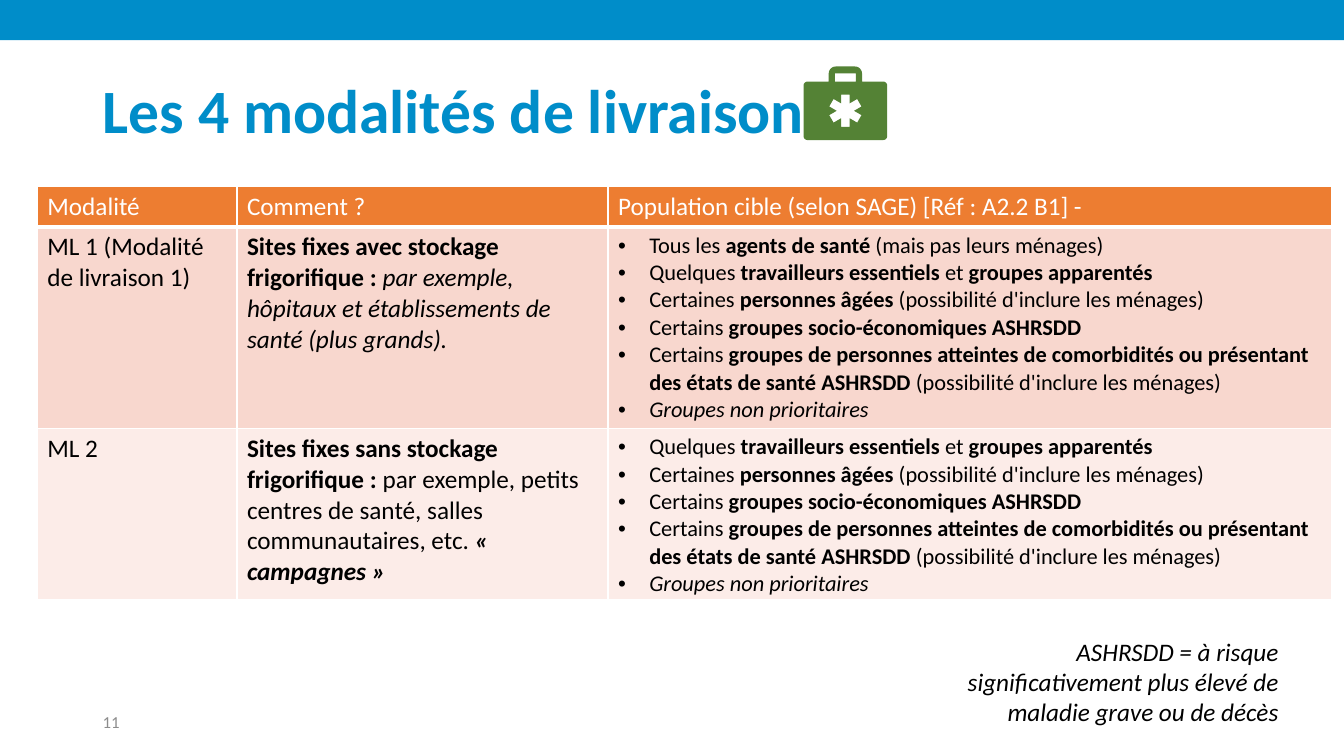
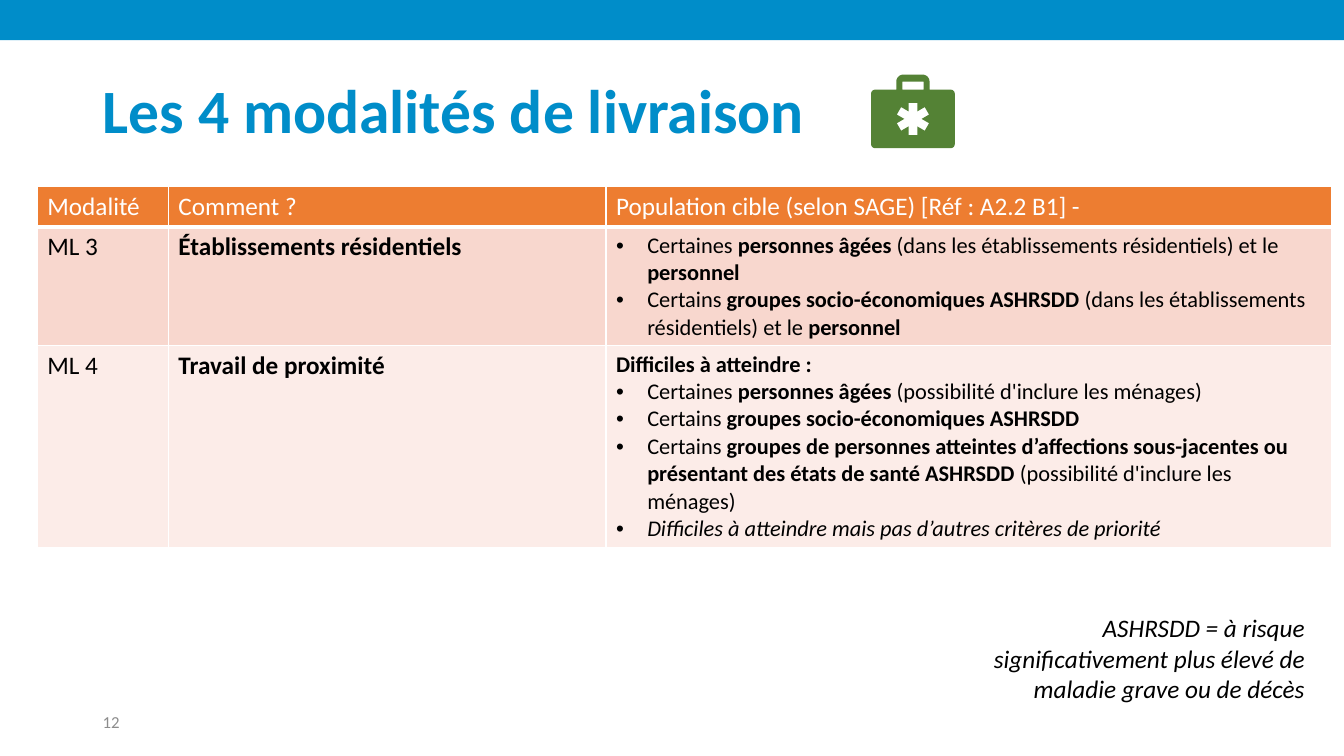
from dataclasses import dataclass
from math import cos, radians, sin

from lxml import etree
from pptx import Presentation
from pptx.dml.color import RGBColor
from pptx.enum.shapes import MSO_SHAPE
from pptx.enum.text import MSO_ANCHOR, PP_ALIGN
from pptx.oxml.ns import qn
from pptx.util import Inches, Pt

RECTANGLE = MSO_SHAPE.RECTANGLE
MIDDLE, TOP = MSO_ANCHOR.MIDDLE, MSO_ANCHOR.TOP
LEFT, RIGHT = PP_ALIGN.LEFT, PP_ALIGN.RIGHT

Point = tuple[float, float]


@dataclass(frozen=True)
class Theme:
    font: str = "Calibri"
    blue: str = "008DC9"
    orange: str = "ED7D31"
    row_fills: tuple[str, str] = ("F8D7CE", "FCECE8")
    green: str = "548235"
    grey: str = "8C8C8C"
    black: str = "000000"
    white: str = "FFFFFF"
    title_size: int = 44
    body_size: int = 18
    list_size: int = 16
    number_size: int = 12


@dataclass(frozen=True)
class Modality:
    name: str
    method: str
    targets: tuple[str, ...]
    height: float


@dataclass(frozen=True)
class ModalitySlide:
    number: int
    column_widths: tuple[float, float, float]
    modalities: tuple[Modality, ...]
    icon_at: Point
    note_at: Point


THEME = Theme()
TITLE = "Les 4 modalités de livraison"
NOTE = "_ASHRSDD = à risque significativement plus élevé de maladie grave ou de décès_"
HEADERS = ("Modalité", "Comment ?", "Population cible (selon SAGE) [Réf : A2.2 B1] -")
HEADER_HEIGHT = 0.39
BULLET = "• "
BULLET_INDENT = 0.31

# In the texts, * switches bold on and off, and _ switches italic.
WORKERS = "• Quelques *travailleurs essentiels* et *groupes apparentés*"
ELDERLY = "• Certaines *personnes âgées* (possibilité d'inclure les ménages)"
SOCIAL = "• Certains *groupes socio-économiques ASHRSDD*"
COMORBID = (
    "• Certains *groupes de personnes atteintes de comorbidités ou présentant "
    "des états de santé ASHRSDD* (possibilité d'inclure les ménages)"
)
COMMON_TARGETS = (WORKERS, ELDERLY, SOCIAL, COMORBID, "• _Groupes non prioritaires_")

SLIDES = (
    ModalitySlide(
        number=11,
        column_widths=(1.98, 3.68, 7.18),
        modalities=(
            Modality(
                "ML 1 (Modalité de livraison 1)",
                "*Sites fixes avec stockage frigorifique : *_par exemple, hôpitaux "
                "et établissements de santé (plus grands)._",
                ("• Tous les *agents de santé* (mais pas leurs ménages)", *COMMON_TARGETS),
                2.0,
            ),
            Modality(
                "ML 2",
                "*Sites fixes sans stockage frigorifique : *par exemple, petits centres "
                "de santé, salles communautaires, etc. *_« campagnes »_*",
                COMMON_TARGETS,
                1.7,
            ),
        ),
        icon_at=(7.97, 0.66),
        note_at=(8.8, 6.26),
    ),
    ModalitySlide(
        number=12,
        column_widths=(1.3, 4.34, 7.2),
        modalities=(
            Modality(
                "ML 3",
                "*Établissements résidentiels*",
                (
                    "• Certaines *personnes âgées* (dans les établissements résidentiels) "
                    "et le *personnel*",
                    f"{SOCIAL} (dans les établissements résidentiels) et le *personnel*",
                ),
                1.18,
            ),
            Modality(
                "ML 4",
                "*Travail de proximité*",
                (
                    "*Difficiles à atteindre :*",
                    ELDERLY,
                    SOCIAL,
                    COMORBID.replace("de comorbidités", "d’affections sous-jacentes"),
                    "• _Difficiles à atteindre mais pas d’autres critères de priorité_",
                ),
                2.0,
            ),
        ),
        icon_at=(8.64, 0.74),
        note_at=(9.06, 6.03),
    ),
)


def add_bullet(paragraph) -> None:
    properties = paragraph._p.get_or_add_pPr()
    properties.set("marL", str(Inches(BULLET_INDENT)))
    properties.set("indent", str(-Inches(BULLET_INDENT)))
    etree.SubElement(properties, qn("a:buFont"), typeface="Arial")
    etree.SubElement(properties, qn("a:buChar"), char=BULLET.strip())


def write_text(text_frame, *lines: str, size: int, color: str = THEME.black,
               align=LEFT, line_spacing: float = 1.0) -> None:
    """Write one paragraph per line, reading the bold, italic and bullet marks."""
    for index, line in enumerate(lines):
        paragraph = text_frame.add_paragraph() if index else text_frame.paragraphs[0]
        paragraph.alignment = align
        paragraph.line_spacing = line_spacing
        if line.startswith(BULLET):
            add_bullet(paragraph)
        for bold_index, bold_part in enumerate(line.removeprefix(BULLET).split("*")):
            for italic_index, text in enumerate(bold_part.split("_")):
                if not text:
                    continue
                run = paragraph.add_run()
                run.text = text
                run.font.name = THEME.font
                run.font.size = Pt(size)
                run.font.bold = bold_index % 2 == 1
                run.font.italic = italic_index % 2 == 1
                run.font.color.rgb = RGBColor.from_string(color)


def add_text_box(slide, left: float, top: float, width: float, height: float,
                 text: str, anchor=TOP, **text_format) -> None:
    box = slide.shapes.add_textbox(Inches(left), Inches(top), Inches(width), Inches(height))
    box.text_frame.word_wrap = True
    box.text_frame.vertical_anchor = anchor
    write_text(box.text_frame, text, **text_format)


def paint(shape, color: str) -> None:
    """Give a shape a flat fill without line or shadow."""
    shape.fill.solid()
    shape.fill.fore_color.rgb = RGBColor.from_string(color)
    shape.line.fill.background()
    shape.shadow.inherit = False


def fill_cell(cell, color: str, bottom_border: float = 1) -> None:
    """Fill a cell and draw its white borders."""
    cell.fill.solid()
    cell.fill.fore_color.rgb = RGBColor.from_string(color)
    properties = cell._tc.get_or_add_tcPr()
    widths = {"a:lnL": 1, "a:lnR": 1, "a:lnT": 1, "a:lnB": bottom_border}
    for index, (tag, width) in enumerate(widths.items()):
        border = etree.Element(qn(tag), w=str(Pt(width)))
        solid = etree.SubElement(border, qn("a:solidFill"))
        etree.SubElement(solid, qn("a:srgbClr"), val=THEME.white)
        properties.insert(index, border)


def add_modality_table(slide, content: ModalitySlide) -> None:
    heights = (HEADER_HEIGHT, *(modality.height for modality in content.modalities))
    table = slide.shapes.add_table(
        len(heights), len(HEADERS), Inches(0.37), Inches(1.85),
        Inches(sum(content.column_widths)), Inches(sum(heights)),
    ).table
    table.first_row = table.horz_banding = False
    for column, width in zip(table.columns, content.column_widths):
        column.width = Inches(width)
    for row, height in zip(table.rows, heights):
        row.height = Inches(height)

    for column_index, header in enumerate(HEADERS):
        cell = table.cell(0, column_index)
        fill_cell(cell, THEME.orange, bottom_border=3)
        write_text(cell.text_frame, header, size=THEME.body_size, color=THEME.white)

    for row_index, modality in enumerate(content.modalities, start=1):
        columns = (
            ((modality.name,), THEME.body_size),
            ((modality.method,), THEME.body_size),
            (modality.targets, THEME.list_size),
        )
        for column_index, (lines, size) in enumerate(columns):
            cell = table.cell(row_index, column_index)
            fill_cell(cell, THEME.row_fills[row_index - 1])
            write_text(cell.text_frame, *lines, size=size)


def polar(center: Point, radius: float, degrees: float) -> Point:
    angle = radians(degrees)
    return center[0] + radius * cos(angle), center[1] + radius * sin(angle)


def rounded_corner(center: Point, radius: float, start: int) -> list[Point]:
    return [polar(center, radius, start + step) for step in range(0, 91, 15)]


def case_outline() -> list[Point]:
    corner, handle = 0.04, 0.07
    return [
        *rounded_corner((0.04, 0.19), corner, 180),
        (0.25, 0.15),
        *rounded_corner((0.32, 0.07), handle, 180),
        *rounded_corner((0.51, 0.07), handle, 270),
        (0.58, 0.15),
        *rounded_corner((0.79, 0.19), corner, 270),
        *rounded_corner((0.79, 0.69), corner, 0),
        *rounded_corner((0.04, 0.69), corner, 90),
    ]


def medical_star() -> list[Point]:
    """Six square-ended arms, with one inner corner between neighbours."""
    center, length, half_width = (0.415, 0.44), 0.16, 0.043
    points = []
    for angle in range(30, 390, 60):
        tip = polar(center, length, angle)
        points += [
            polar(tip, half_width, angle - 90),
            polar(tip, half_width, angle + 90),
            polar(center, 2 * half_width, angle + 30),
        ]
    return points


def add_medical_case(slide, left: float, top: float) -> None:
    handle_hole = [(0.31, 0.07), (0.52, 0.07), (0.52, 0.15), (0.31, 0.15)]
    outline, *holes = (
        [(Inches(x), Inches(y)) for x, y in contour]
        for contour in (case_outline(), handle_hole, medical_star())
    )
    builder = slide.shapes.build_freeform(*outline[0])
    builder.add_line_segments(outline[1:], close=True)
    for hole in holes:
        builder.move_to(*hole[0])
        builder.add_line_segments(hole[1:], close=True)
    paint(builder.convert_to_shape(Inches(left), Inches(top)), THEME.green)


def add_modality_slide(presentation, content: ModalitySlide) -> None:
    slide = presentation.slides.add_slide(presentation.slide_layouts[6])
    band = slide.shapes.add_shape(RECTANGLE, 0, 0, presentation.slide_width, Inches(0.4))
    paint(band, THEME.blue)
    add_text_box(slide, 0.92, 0.4, 11.5, 1.45, f"*{TITLE}*", anchor=MIDDLE,
                 size=THEME.title_size, color=THEME.blue, line_spacing=0.9)
    add_modality_table(slide, content)
    add_text_box(slide, *content.note_at, 3.98, 0.71, NOTE,
                 size=THEME.body_size, align=RIGHT)
    add_medical_case(slide, *content.icon_at)
    add_text_box(slide, 0.92, 6.96, 3, 0.4, str(content.number), anchor=MIDDLE,
                 size=THEME.number_size, color=THEME.grey)


def main() -> None:
    presentation = Presentation()
    presentation.slide_width = Inches(13.33)
    presentation.slide_height = Inches(7.5)
    for content in SLIDES:
        add_modality_slide(presentation, content)
    presentation.save("out.pptx")


if __name__ == "__main__":
    main()
